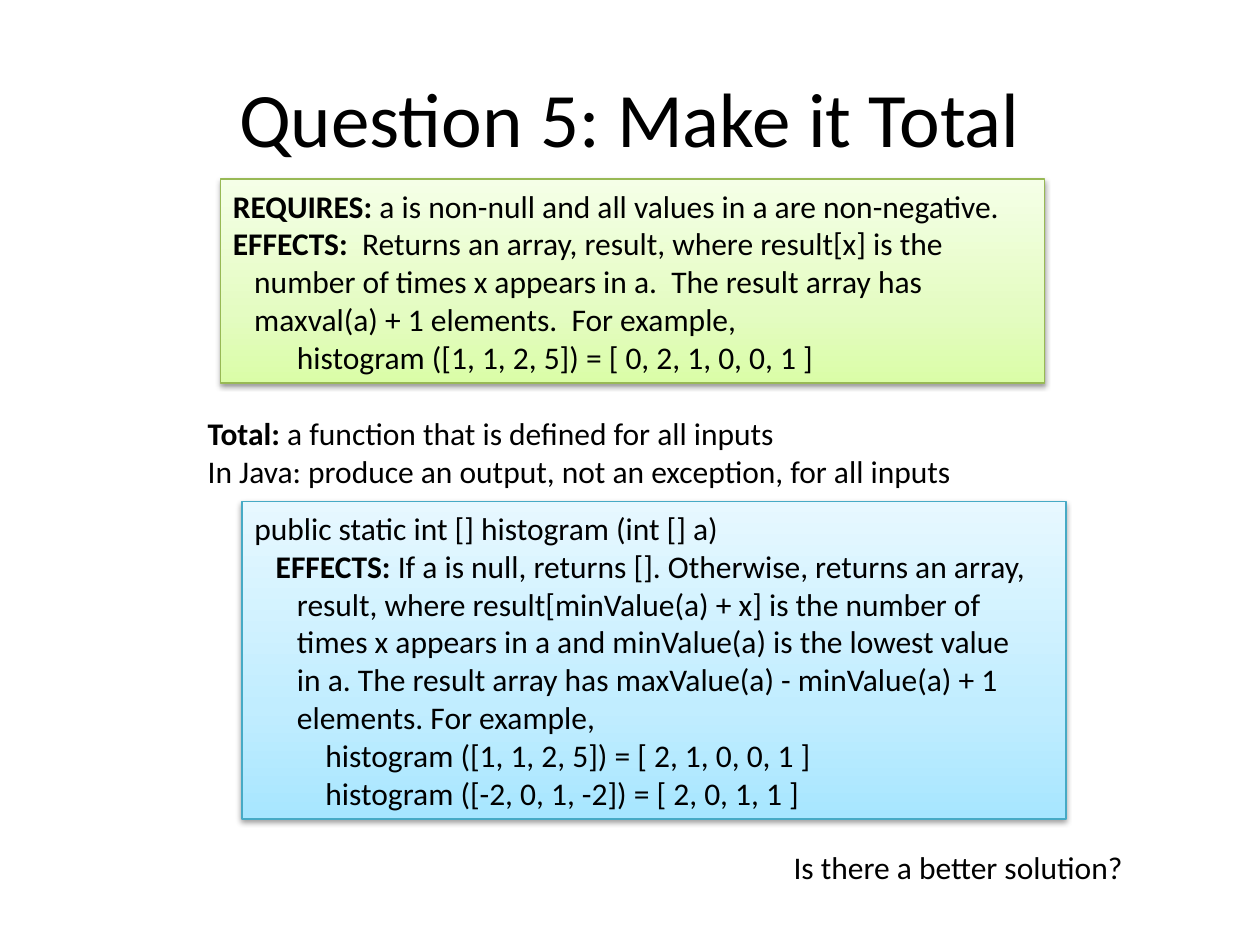
from lxml import etree
from pptx import Presentation
from pptx.dml.color import RGBColor
from pptx.enum.shapes import MSO_SHAPE
from pptx.enum.text import MSO_ANCHOR, PP_ALIGN
from pptx.oxml.ns import qn
from pptx.util import Inches, Pt

RECTANGLE = MSO_SHAPE.RECTANGLE
MIDDLE = MSO_ANCHOR.MIDDLE
LEFT, CENTER = PP_ALIGN.LEFT, PP_ALIGN.CENTER
FONT, INK = "Calibri", "000000"
INDENT = 0.0565  # inches per indent step
STOPS = (0, 35, 100)

# Each line: indent steps, bold lead, plain text
REQUIRES = [
    (0, "REQUIRES: ", "a is non-null and all values in a are non-negative."),
    (0, "EFFECTS: ", " Returns an array, result, where result[x] is the"),
    (3, "", "number of times x appears in a.  The result array has"),
    (3, "", "maxval(a) + 1 elements.  For example,"),
    (9, "", "histogram ([1, 1, 2, 5]) = [ 0, 2, 1, 0, 0, 1 ]"),
]
TOTAL = [
    (0, "Total:", " a function that is defined for all inputs"),
    (0, "", "In Java: produce an output, not an exception, for all inputs"),
]
SOLUTION = [
    (0, "", "public static int [] histogram (int [] a)"),
    (3, "EFFECTS: ", "If a is null, returns []. Otherwise, returns an array,"),
    (6, "", "result, where result[minValue(a) + x] is the number of"),
    (6, "", "times x appears in a and minValue(a) is the lowest value"),
    (6, "", "in a. The result array has maxValue(a) - minValue(a) + 1"),
    (6, "", "elements. For example,"),
    (10, "", "histogram ([1, 1, 2, 5]) = [ 2, 1, 0, 0, 1 ]"),
    (10, "", "histogram ([-2, 0, 1, -2]) = [ 2, 0, 1, 1 ]"),
]


def rgb(color):
    return RGBColor.from_string(color)


def add_node(parent, tag, **attributes):
    node = etree.SubElement(parent, qn(tag))
    for name, value in attributes.items():
        node.set(name, str(value))
    return node


def write_lines(frame, lines, size=18, align=LEFT):
    for index, (steps, lead, text) in enumerate(lines):
        para = frame.paragraphs[0] if index == 0 else frame.add_paragraph()
        para.alignment = align
        if steps:
            para._p.get_or_add_pPr().set("marL", str(Inches(steps * INDENT)))
        for words, bold in ((lead, True), (text, False)):
            if words:
                span = para.add_run()
                span.text = words
                span.font.name, span.font.size = FONT, Pt(size)
                span.font.bold = bold
                span.font.color.rgb = rgb(INK)


def fill_upward(shape, colors):
    """Fill with a gradient that runs from the bottom edge to the top."""
    shape.fill.gradient()
    gradient = shape._element.spPr.find(qn("a:gradFill"))
    for child in list(gradient):
        gradient.remove(child)
    stops = add_node(gradient, "a:gsLst")
    for position, color in zip(STOPS, colors):
        stop = add_node(stops, "a:gs", pos=position * 1000)
        add_node(stop, "a:srgbClr", val=color)
    add_node(gradient, "a:lin", ang=270 * 60000, scaled=0)


def drop_shadow(shape):
    shape.shadow.inherit = False
    effects = shape._element.spPr.find(qn("a:effectLst"))
    shadow = add_node(effects, "a:outerShdw", blurRad=Pt(3.1), dist=Pt(1.6),
                      dir=90 * 60000, rotWithShape=0)
    add_node(add_node(shadow, "a:srgbClr", val=INK), "a:alpha", val=38000)


def add_panel(page, box, lines, colors, edge):
    panel = page.shapes.add_shape(RECTANGLE, *map(Inches, box))
    fill_upward(panel, colors)
    panel.line.color.rgb = rgb(edge)
    panel.line.width = Pt(0.75)
    drop_shadow(panel)
    panel.text_frame.word_wrap = True
    panel.text_frame.vertical_anchor = MIDDLE
    write_lines(panel.text_frame, lines)


def add_note(page, box, lines):
    note = page.shapes.add_textbox(*map(Inches, box))
    note.text_frame.word_wrap = False
    write_lines(note.text_frame, lines)


def add_title(page, box, text):
    title = page.shapes.add_textbox(*map(Inches, box))
    title.text_frame.word_wrap = True
    title.text_frame.vertical_anchor = MIDDLE
    write_lines(title.text_frame, [(0, "", text)], size=44, align=CENTER)


def main():
    deck = Presentation()
    deck.slide_width, deck.slide_height = Inches(10), Inches(7.5)
    page = deck.slides.add_slide(deck.slide_layouts[6])
    add_title(page, (0.5, 0.3, 9, 1.25), "Question 5: Make it Total")
    add_panel(page, (1.75, 1.42, 6.54, 1.62), REQUIRES,
              ("DAFDA7", "E4FCC2", "F5FFE7"), "98B955")
    add_note(page, (1.55, 3.24, 6.18, 0.71), TOTAL)
    add_panel(page, (1.92, 3.98, 6.54, 2.52), SOLUTION,
              ("A7E6FF", "C1EDFF", "E7F8FF"), "46AAC5")
    add_note(page, (6.2, 6.68, 2.85, 0.4),
             [(0, "", "Is there a better solution?")])
    deck.save("out.pptx")


if __name__ == "__main__":
    main()
